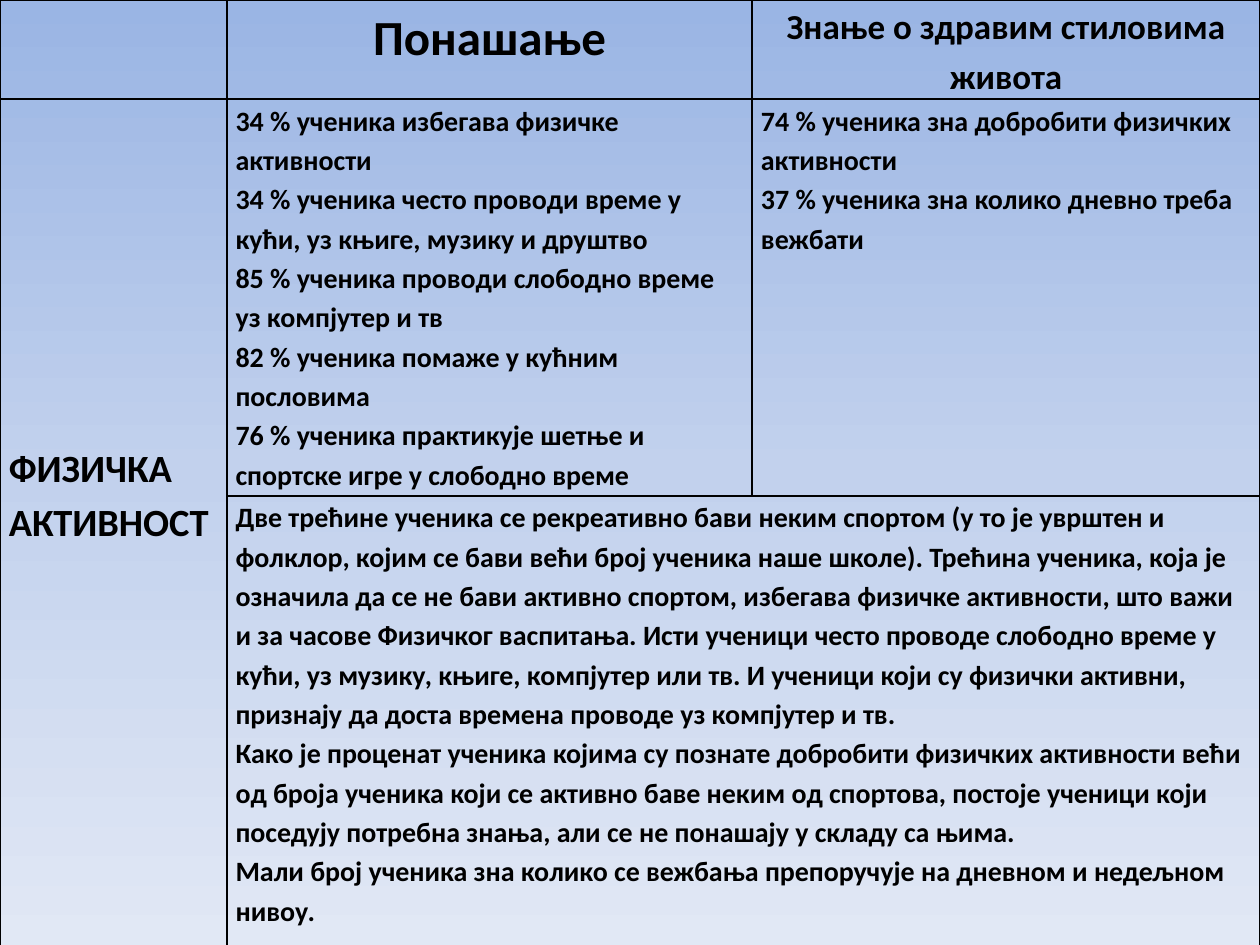
"""Builds a slide with a table on pupils' physical activity."""
from dataclasses import dataclass

from lxml import etree
from pptx import Presentation
from pptx import util as u
from pptx.dml.color import RGBColor
from pptx.enum import text
from pptx.oxml import ns


@dataclass(frozen=True)
class Theme:
    font: str = "Calibri"
    ink: str = "000000"
    backdrop: tuple = ((0, "9AB5E4"), (50, "C2D1ED"), (100, "E1E8F5"))
    title: int = 28
    label: int = 22
    heading: int = 20
    body: int = 16
    leading: float = 1.15
    inset: float = 0.07
    border: int = 1


BEHAVIOUR = (
    "34 % ученика избегава физичке активности",
    "34 % ученика често проводи време у кући, уз књиге, музику и друштво",
    "85 % ученика проводи слободно време уз компјутер и тв",
    "82 % ученика помаже у кућним пословима",
    "76 % ученика практикује шетње и спортске игре у слободно време",
)
KNOWLEDGE = (
    "74 % ученика зна добробити физичких активности",
    "37 % ученика зна колико дневно треба вежбати",
)
CONCLUSIONS = (
    "Две трећине ученика се рекреативно бави неким спортом (у то је уврштен и "
    "фолклор, којим се бави већи број ученика наше школе). Трећина ученика, која је "
    "означила да се не бави активно спортом, избегава физичке активности, што важи "
    "и за часове Физичког васпитања. Исти ученици често проводе слободно време у "
    "кући, уз музику, књиге, компјутер или тв. И ученици који су физички активни, "
    "признају да доста времена проводе уз компјутер и тв.",
    "Како је проценат ученика којима су познате добробити физичких активности већи "
    "од броја ученика који се активно баве неким од спортова, постоје ученици који "
    "поседују потребна знања, али се не понашају у складу са њима.",
    "Мали број ученика зна колико се вежбања препоручује на дневном и недељном "
    "нивоу.",
)


def write(frame, lines, theme, size, align=text.PP_ALIGN.LEFT):
    """Fill a text frame with one bold paragraph per line."""
    for index, line in enumerate(lines):
        para = frame.add_paragraph() if index else frame.paragraphs[0]
        para.alignment = align
        para.line_spacing = theme.leading
        span = para.add_run()
        span.text = line
        span.font.name = theme.font
        span.font.size = u.Pt(size)
        span.font.bold = True
        span.font.color.rgb = RGBColor.from_string(theme.ink)


class Page:
    """Holds the theme and the slide being built."""

    def __init__(self, deck, theme):
        self.deck, self.theme = deck, theme
        self.slide = deck.slides.add_slide(deck.slide_layouts[6])

    def backdrop(self):
        """Paint the background with the theme gradient, top to bottom."""
        fill = self.slide.background.fill
        fill.gradient()
        fill.gradient_angle = 270
        stops = self.slide.element.find(".//" + ns.qn("a:gsLst"))
        for stop in list(stops):
            stops.remove(stop)
        for share, colour in self.theme.backdrop:
            stop = etree.SubElement(stops, ns.qn("a:gs"), pos=str(share * 1000))
            etree.SubElement(stop, ns.qn("a:srgbClr"), val=colour)

    def table(self, columns, rows):
        """Add a plain ruled table; columns and rows are shares of the slide."""
        width, height = self.deck.slide_width, self.deck.slide_height
        grid = self.slide.shapes.add_table(
            len(rows), len(columns), 0, 0,
            int(width * sum(columns)), int(height * sum(rows))).table
        grid.first_row = grid.horz_banding = False
        for column, share in zip(grid.columns, columns):
            column.width = int(width * share)
        for row, share in zip(grid.rows, rows):
            row.height = int(height * share)
        for cell in grid.iter_cells():
            cell.margin_left = cell.margin_right = u.Inches(self.theme.inset)
            cell.margin_top = cell.margin_bottom = 0
            self.rule(cell)
            cell.fill.background()
        return grid

    def rule(self, cell):
        """Draw a line on all four sides of a cell."""
        props = cell._tc.get_or_add_tcPr()
        for side in ("a:lnL", "a:lnR", "a:lnT", "a:lnB"):
            line = etree.SubElement(
                props, ns.qn(side), w=str(u.Pt(self.theme.border)))
            fill = etree.SubElement(line, ns.qn("a:solidFill"))
            etree.SubElement(fill, ns.qn("a:srgbClr"), val=self.theme.ink)

    def cell(self, cell, *lines, drop=0, **style):
        """Write lines in a cell, lowered by a share of the slide height."""
        cell.margin_top = int(self.deck.slide_height * drop)
        write(cell.text_frame, lines, self.theme, **style)


def main():
    """Build and save the deck."""
    theme = Theme()
    deck = Presentation()
    deck.slide_width, deck.slide_height = u.Inches(10), u.Inches(7.5)
    page = Page(deck, theme)
    page.backdrop()
    grid = page.table(columns=(0.18, 0.417, 0.403), rows=(0.105, 0.42, 0.552))
    grid.cell(1, 0).merge(grid.cell(2, 0))
    grid.cell(2, 1).merge(grid.cell(2, 2))
    centre = text.PP_ALIGN.CENTER
    page.cell(grid.cell(0, 1), "Понашање", size=theme.title, align=centre)
    page.cell(grid.cell(0, 2), "Знање о здравим стиловима живота",
              size=theme.heading, align=centre)
    page.cell(grid.cell(1, 0), "ФИЗИЧКА АКТИВНОСТ", size=theme.label, drop=0.36)
    page.cell(grid.cell(1, 1), *BEHAVIOUR, size=theme.body)
    page.cell(grid.cell(1, 2), *KNOWLEDGE, size=theme.body)
    page.cell(grid.cell(2, 1), *CONCLUSIONS, size=theme.body)
    deck.save("out.pptx")


if __name__ == "__main__":
    main()
